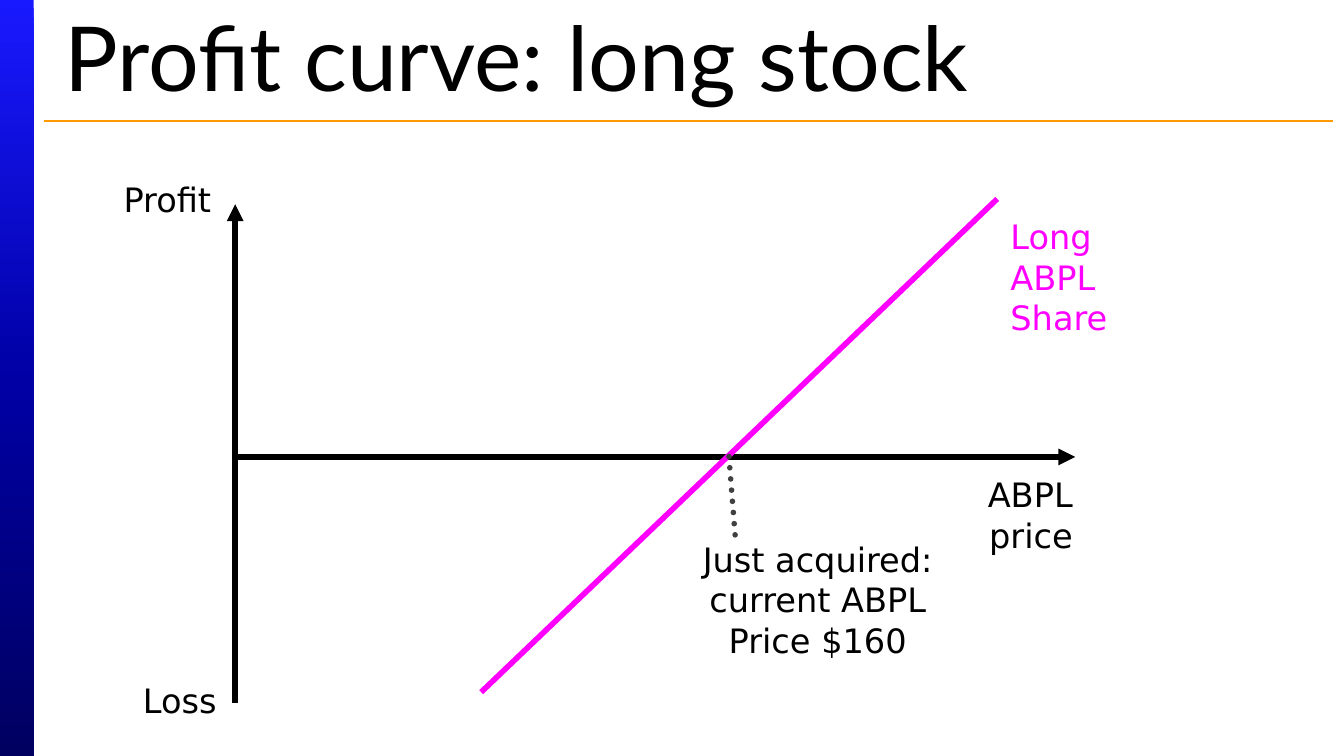
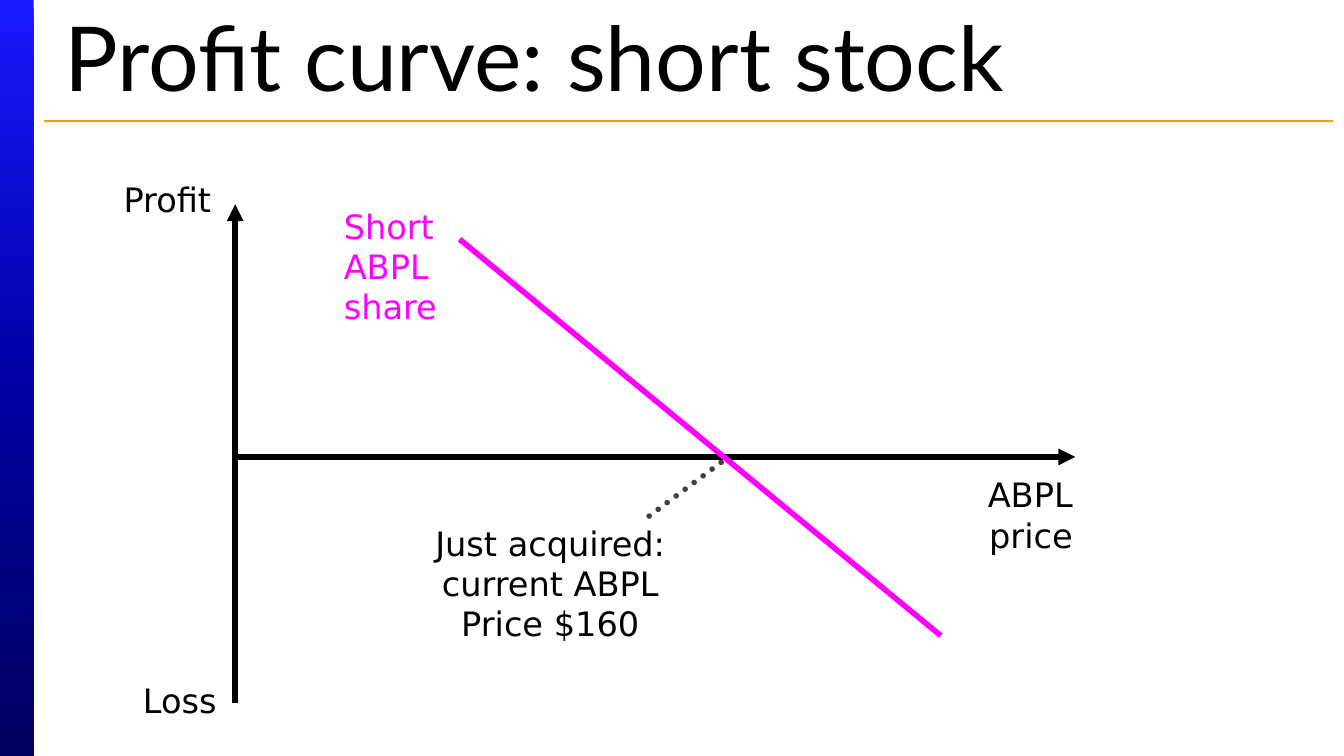
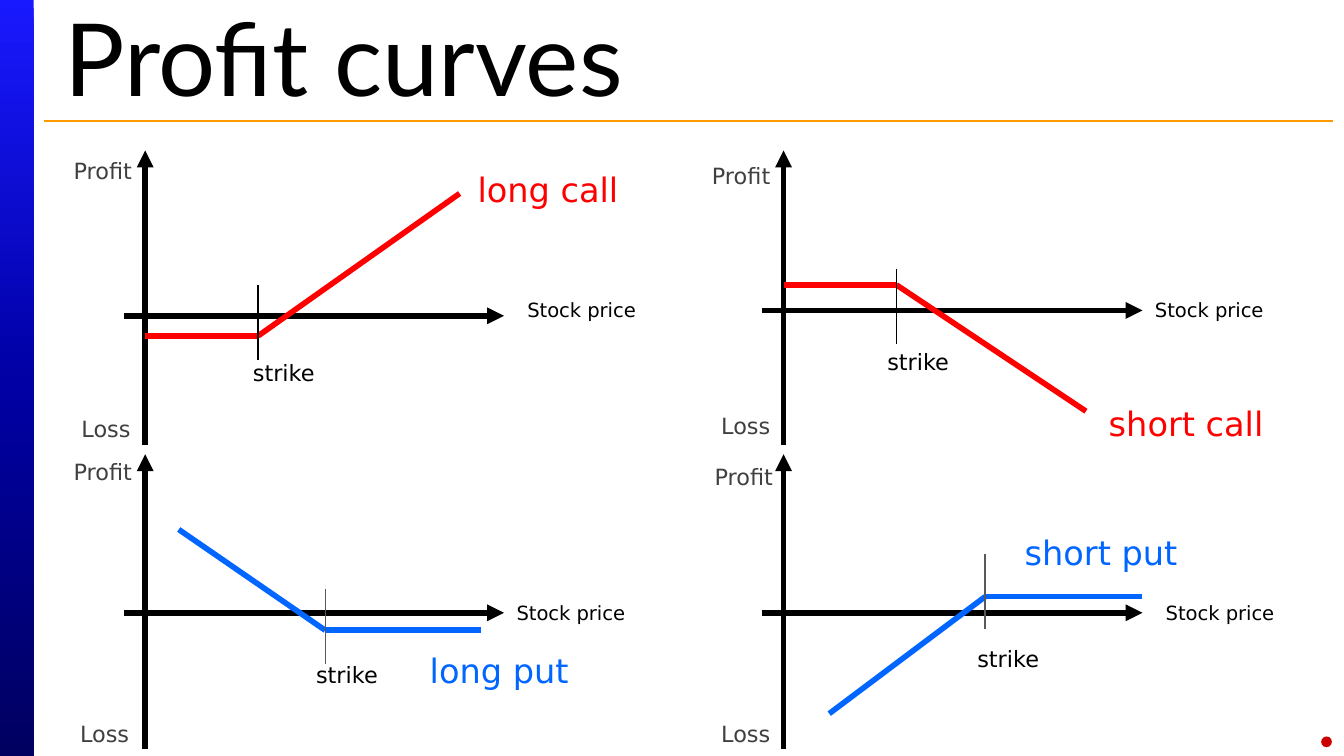
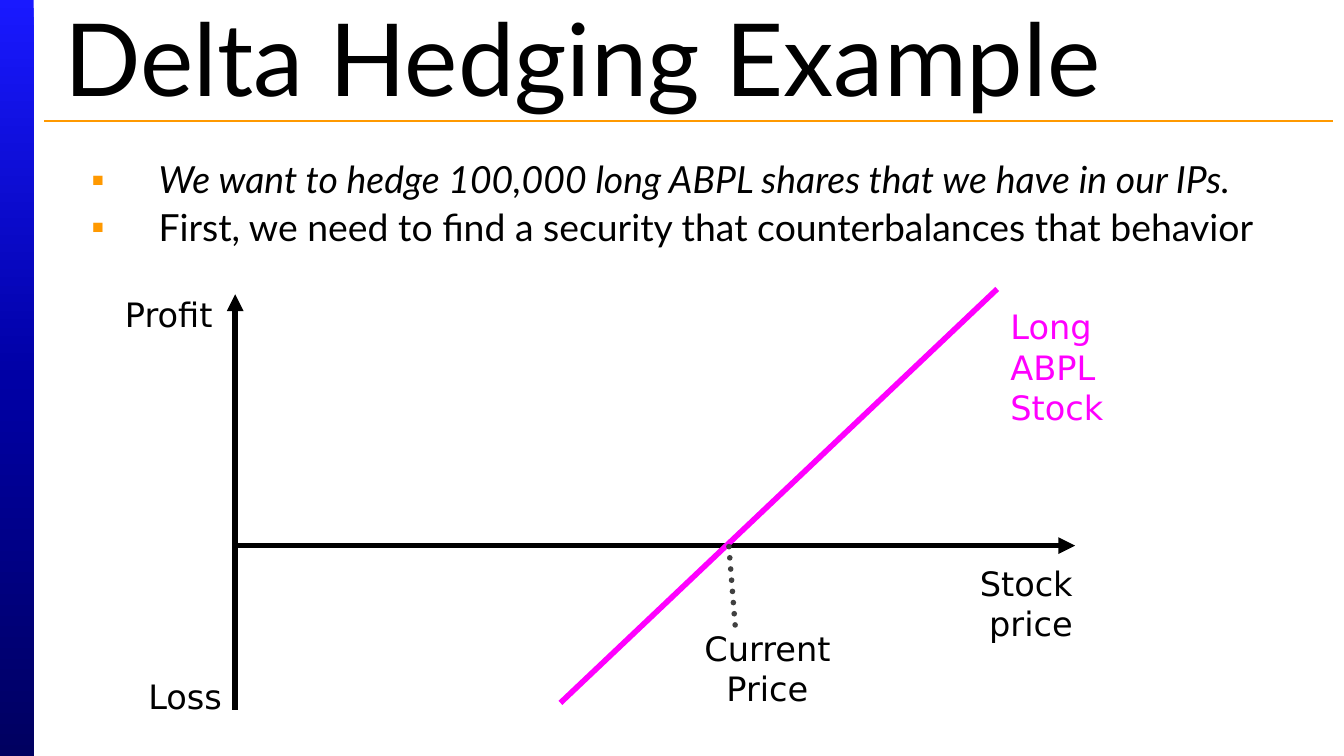
"""Build four slides on profit curves for stocks, calls and puts."""
from lxml import etree
from pptx import Presentation
from pptx.dml.color import RGBColor
from pptx.enum.dml import MSO_LINE
from pptx.enum.shapes import MSO_CONNECTOR, MSO_SHAPE
from pptx.enum.text import MSO_ANCHOR, MSO_AUTO_SIZE, PP_ALIGN
from pptx.oxml.ns import qn
from pptx.util import Inches, Pt

LEFT, MID, RIGHT = PP_ALIGN.LEFT, PP_ALIGN.CENTER, PP_ALIGN.RIGHT
STRAIGHT = MSO_CONNECTOR.STRAIGHT
RECT, OVAL = MSO_SHAPE.RECTANGLE, MSO_SHAPE.OVAL
DOTS = MSO_LINE.ROUND_DOT
MIDDLE = MSO_ANCHOR.MIDDLE
GROW, FIXED = MSO_AUTO_SIZE.SHAPE_TO_FIT_TEXT, MSO_AUTO_SIZE.NONE

WIDE = 10
HIGH = WIDE * 9 / 16
SANS, LATO = "DejaVu Sans", "Lato"
HUES = {
    "black": "000000", "gray": "404040", "tick": "595959", "pink": "FF00FF",
    "red": "FF0000", "blue": "0066FF", "gold": "FF9900", "dot": "CC0000",
}
BAND = [(0, "1919FF"), (50, "0000A5"), (100, "000060")]

STOCKS = [
    {
        "title": "Profit curve: long stock", "size": 48,
        "top": 1.52, "zero": 3.4, "foot": 5.23, "price": "ABPL price",
        "curve": [(3.58, 5.15), (7.42, 1.48)],
        "name": (["Long ABPL Share"], 7.42, 1.56),
        "dots": [(5.47, 3.98), (5.42, 3.35)],
        "note": ("Just acquired: current ABPL Price $160", 5, 3.96, 2.17, 1.01),
        "profit": (0.5, 1.28), "loss": (0.54, 5.01),
    },
    {
        "title": "Profit curve: short stock", "size": 48,
        "top": 1.52, "zero": 3.4, "foot": 5.23, "price": "ABPL price",
        "curve": [(3.42, 1.78), (7, 4.73)],
        "name": (["Short", "ABPL share"], 2.46, 1.48),
        "dots": [(4.83, 3.84), (5.42, 3.4)],
        "note": ("Just acquired: current ABPL Price $160", 3.01, 3.84, 2.17, 1.01),
        "profit": (0.5, 1.28), "loss": (0.54, 5.01),
    },
    {
        "title": "Delta Hedging Example", "size": 54,
        "top": 2.19, "zero": 4.06, "foot": 5.28, "price": "Stock price",
        "curve": [(4.17, 5.23), (7.42, 2.15)],
        "name": (["Long ABPL Stock"], 7.42, 2.23),
        "dots": [(5.47, 4.65), (5.42, 4.02)],
        "note": ("Current Price", 5, 4.62, 1.42, 0.71),
        "profit": (0.51, 2.14), "loss": (0.58, 4.98),
    },
]
POINTS = [
    ("We want to hedge 100,000 long ABPL shares that we have in our IPs.", True),
    ("First, we need to find a security that counterbalances that behavior", False),
]
OPTIONS = [
    {
        "name": "long call", "hue": "red", "tick": "black", "zero": 2.35,
        "curve": [(1.08, 2.5), (1.92, 2.5), (3.42, 1.44)], "mark": (1.92, 2.12),
        "at": {"price": (3.75, 2.17), "profit": (0.33, 1.12), "name": (3.45, 1.21),
               "strike": (1.36, 2.62), "loss": (0.32, 3.04)},
    },
    {
        "name": "short call", "hue": "red", "tick": "black", "zero": 2.31,
        "curve": [(5.83, 2.12), (6.67, 2.12), (8.08, 3.06)], "mark": (6.67, 2),
        "at": {"price": (8.42, 2.17), "profit": (5.08, 1.16), "name": (8.14, 2.95),
               "strike": (6.08, 2.54), "loss": (5.08, 3.02)},
    },
    {
        "name": "long put", "hue": "blue", "tick": "tick", "zero": 4.56,
        "curve": [(1.33, 3.94), (2.42, 4.69), (3.58, 4.69)], "mark": (2.42, 4.38),
        "at": {"price": (3.67, 4.42), "profit": (0.33, 3.36), "name": (3.08, 4.79),
               "strike": (1.83, 4.87), "loss": (0.31, 5.31)},
    },
    {
        "name": "short put", "hue": "blue", "tick": "tick", "zero": 4.56,
        "curve": [(6.17, 5.31), (7.33, 4.44), (8.5, 4.44)], "mark": (7.33, 4.12),
        "at": {"price": (8.5, 4.42), "profit": (5.1, 3.4), "name": (7.5, 3.91),
               "strike": (6.75, 4.75), "loss": (5.08, 5.31)},
    },
]
LABELS = {
    "price": ("Stock price", 1.08, 0.29, 10.5, "black"),
    "profit": ("Profit", 0.75, 0.3, 12, "gray"),
    "strike": ("strike", 1.08, 0.3, 12, "black"),
    "loss": ("Loss", 0.75, 0.3, 12, "gray"),
}
COLS, ROWS = (1.08, 5.83), (1.12, 3.38)


def rgb(hue):
    return RGBColor.from_string(HUES[hue])


def place(shape, *box):
    shape.left, shape.top, shape.width, shape.height = map(Inches, box)


def write(para, text, size, hue="black", font=SANS, slant=None):
    run = para.add_run()
    run.text = text
    run.font.size, run.font.name = Pt(size), font
    run.font.color.rgb, run.font.italic = rgb(hue), slant


def label(shapes, lines, box, size=18, hue="black", align=RIGHT, wrap=True):
    frame = shapes.add_textbox(*map(Inches, box)).text_frame
    frame.word_wrap, frame.auto_size = wrap, GROW
    for i, text in enumerate(lines):
        para = frame.add_paragraph() if i else frame.paragraphs[0]
        para.alignment = align
        write(para, text, size, hue)


def line(shapes, start, end, hue="black", width=3, arrow=False, dots=False):
    link = shapes.add_connector(STRAIGHT, *map(Inches, start + end))
    link.line.color.rgb, link.line.width = rgb(hue), Pt(width)
    props = link.element.spPr
    stroke = props.find(qn("a:ln"))
    if dots:
        link.line.dash_style = DOTS
        stroke.set("cap", "rnd")
    if arrow:
        etree.SubElement(stroke, qn("a:headEnd"), type="triangle")
    etree.SubElement(props, qn("a:effectLst"))
    return link


def plain(slide, kind, *box):
    shape = slide.shapes.add_shape(kind, *map(Inches, box))
    shape.shadow.inherit = False
    shape.line.fill.background()
    return shape


def dress(deck, slide):
    """Move the side band and title rule to the slide master."""
    band = plain(slide, RECT, 0, 0, 0.25, HIGH)
    band.fill.gradient()
    band.fill.gradient_angle = 270
    stops = band.element.find(".//" + qn("a:gsLst"))
    for stop in list(stops):
        stops.remove(stop)
    for pos, tone in BAND:
        stop = etree.SubElement(stops, qn("a:gs"), pos=str(pos * 1000))
        etree.SubElement(stop, qn("a:srgbClr"), val=tone)
    rule = line(slide.shapes, (0.33, 0.9), (9.92, 0.9), "gold", 0.75)
    for i, part in enumerate((band, rule)):
        part.element.find(".//" + qn("p:cNvPr")).set("id", str(90 + i))
        deck.slide_master.shapes.element.insert(2 + i, part.element)


def start(deck, title, size, layout=5):
    slide = deck.slides.add_slide(deck.slide_layouts[layout])
    head = slide.shapes.title
    place(head, 0.38, 0.15, 9.58, 0.53)
    frame = head.text_frame
    frame.vertical_anchor, frame.auto_size = MIDDLE, FIXED
    frame.paragraphs[0].alignment = LEFT
    write(frame.paragraphs[0], title, size, font=LATO)
    return slide


def draw_stock(slide, plot):
    group = slide.shapes.add_group_shape().shapes
    zero = plot["zero"]
    line(group, (1.75, plot["top"]), (1.75, plot["foot"]), arrow=True)
    line(group, (8, zero), (1.75, zero), arrow=True)
    label(group, [plot["price"]], (7, zero + 0.08, 1.08, 0.71))
    line(group, *plot["curve"], "pink")
    name, x, y = plot["name"]
    label(group, name, (x, y, 1.5, 1.01), hue="pink", align=LEFT)
    line(group, *plot["dots"], "gray", dots=True)
    note, *box = plot["note"]
    label(group, [note], box, align=MID)
    for key in ("profit", "loss"):
        label(slide.shapes, [key.title()], (*plot[key], 1.17, 0.4))


def draw_option(slide, plot, left, top):
    group = slide.shapes.add_group_shape().shapes
    zero, hue = plot["zero"], plot["hue"]
    line(group, (left, top), (left, top + 2.19), arrow=True)
    line(group, (left + 2.67, zero), (left - 0.16, zero), arrow=True)
    for a, b in zip(plot["curve"], plot["curve"][1:]):
        line(group, a, b, hue)
    x, y = plot["mark"]
    line(group, (x, y), (x, y + 0.56), plot["tick"], 0.75)
    for key, (text, wide, high, size, tone) in LABELS.items():
        label(group, [text], (*plot["at"][key], wide, high), size, tone)
    wide = 1.25 if plot["name"].startswith("long") else 1.36
    label(group, [plot["name"]], (*plot["at"]["name"], wide, 0.4), hue=hue, wrap=False)


def fill_list(body):
    place(body, 0.58, 1.15, 9.42, 1.25)
    frame = body.text_frame
    frame.auto_size = FIXED
    for i, (text, slant) in enumerate(POINTS):
        para = frame.add_paragraph() if i else frame.paragraphs[0]
        para.line_spacing, para.space_before = 0.9, Pt(4)
        write(para, text, 20, font=LATO, slant=slant)
        props = para._p.get_or_add_pPr()
        props.set("marL", str(Inches(0.5)))
        props.set("indent", str(-Inches(0.5)))
        tint = etree.SubElement(props, qn("a:buClr"))
        etree.SubElement(tint, qn("a:srgbClr"), val=HUES["gold"])
        etree.SubElement(props, qn("a:buChar"), char="▪")


def main():
    deck = Presentation()
    deck.slide_width, deck.slide_height = Inches(WIDE), Inches(HIGH)
    for i, plot in enumerate(STOCKS[:2]):
        slide = start(deck, plot["title"], plot["size"])
        if not i:
            dress(deck, slide)
        draw_stock(slide, plot)

    slide = start(deck, "Profit curves", 54)
    for i, plot in enumerate(OPTIONS):
        draw_option(slide, plot, COLS[i % 2], ROWS[i // 2])
    dot = plain(slide, OVAL, 9.83, 5.48, 0.08, 0.08)
    dot.fill.solid()
    dot.fill.fore_color.rgb = rgb("dot")

    plot = STOCKS[2]
    slide = start(deck, plot["title"], plot["size"], 1)
    fill_list(slide.placeholders[1])
    draw_stock(slide, plot)
    deck.save("out.pptx")


if __name__ == "__main__":
    main()
